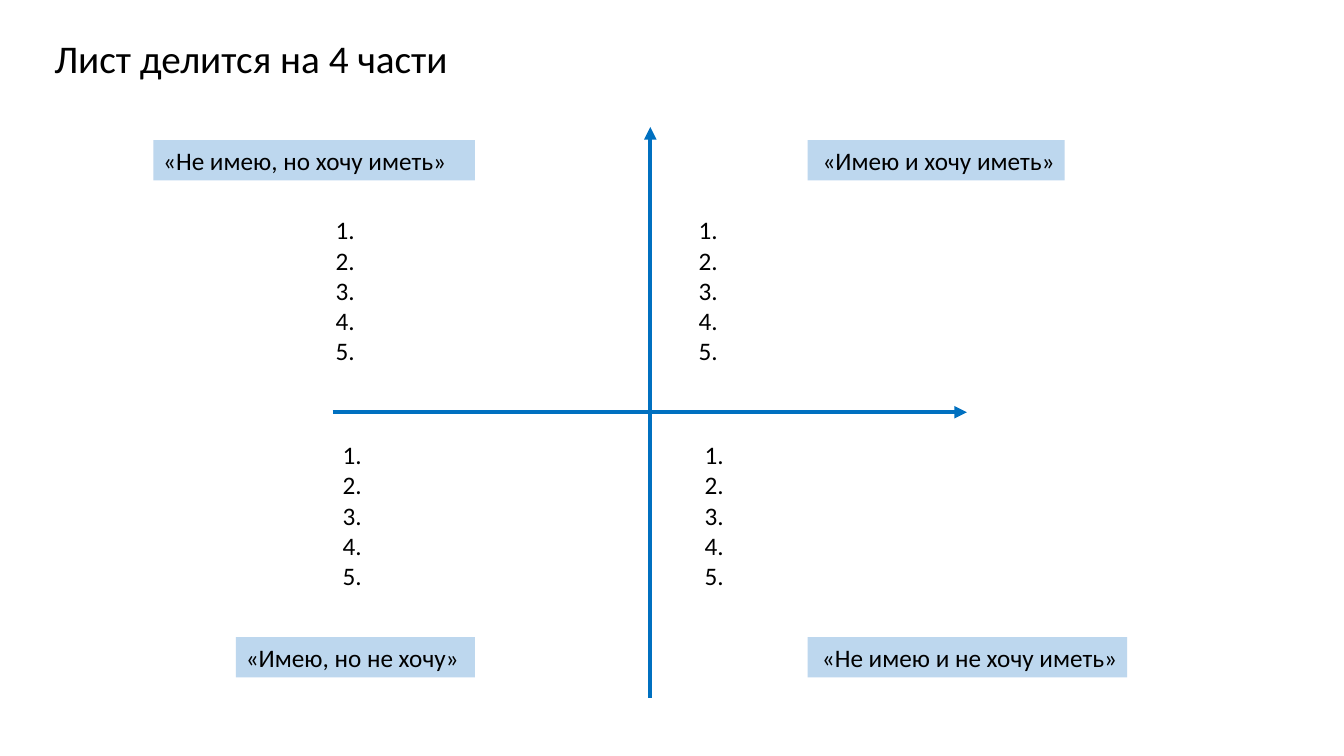
"""Build a slide that splits a sheet into four quadrants of wishes."""
from lxml.etree import SubElement
from pptx import Presentation
from pptx.dml.color import RGBColor
from pptx.enum.shapes import MSO_CONNECTOR
from pptx.enum.text import MSO_AUTO_SIZE, MSO_ANCHOR, PP_ALIGN
from pptx.oxml.ns import qn
from pptx.util import Inches, Pt

TITLE = "Лист делится на 4 части"
TITLE_BOX = (0.44, 0.29, 6.67, 0.57)
AXES = [(6.45, 6.92, 6.45, 1.26), (3.3, 4.09, 9.59, 4.09)]
NUMBERS = [f"{number}." for number in range(1, 6)]
LABEL_HEIGHT = 0.4
LIST_SIZE = (2.37, 1.62)
ROWS = {"top": {"label": 1.39, "list": 2.08}, "bottom": {"label": 6.32, "list": 4.31}}
QUADRANTS = [
    ("«Имею и хочу иметь»", "top", 8.01, 2.55, 6.83, PP_ALIGN.RIGHT),
    ("«Не имею, но хочу иметь»", "top", 1.52, 3.19, 3.23, PP_ALIGN.LEFT),
    ("«Имею, но не хочу»", "bottom", 2.34, 2.37, 3.3, PP_ALIGN.LEFT),
    ("«Не имею и не хочу иметь»", "bottom", 8.01, 3.17, 6.89, PP_ALIGN.RIGHT),
]
FRAME_FORMAT = {
    "word_wrap": True,
    "auto_size": MSO_AUTO_SIZE.SHAPE_TO_FIT_TEXT,
    "vertical_anchor": MSO_ANCHOR.TOP,
}


def color(value):
    return RGBColor.from_string(value)


def add_text(page, box, lines, size=18, align=PP_ALIGN.LEFT, fill=None):
    shape = page.shapes.add_textbox(*map(Inches, box))
    if fill:
        shape.fill.solid()
        shape.fill.fore_color.rgb = color(fill)
    frame = shape.text_frame
    for name, value in FRAME_FORMAT.items():
        setattr(frame, name, value)
    for index, line in enumerate(lines):
        para = frame.add_paragraph() if index else frame.paragraphs[0]
        para.alignment = align
        span = para.add_run()
        span.text = line
        for name, value in {"name": "Calibri", "size": Pt(size)}.items():
            setattr(span.font, name, value)
        span.font.color.rgb = color("000000")


def add_axis(page, ends):
    axis = page.shapes.add_connector(MSO_CONNECTOR.STRAIGHT, *map(Inches, ends))
    axis.line.width = Pt(3)
    axis.line.color.rgb = color("0070C0")
    SubElement(axis.line._get_or_add_ln(), qn("a:tailEnd"), type="triangle")
    SubElement(axis._element.spPr, qn("a:effectLst"))


def main():
    deck = Presentation()
    deck.slide_width, deck.slide_height = Inches(13.33), Inches(7.5)
    page = deck.slides.add_slide(deck.slide_layouts[6])
    for ends in AXES:
        add_axis(page, ends)
    add_text(page, TITLE_BOX, [TITLE], size=28)
    for label, row, left, width, list_left, align in QUADRANTS:
        tops = ROWS[row]
        label_box = (left, tops["label"], width, LABEL_HEIGHT)
        add_text(page, label_box, [label], align=align, fill="BDD7EE")
        add_text(page, (list_left, tops["list"], *LIST_SIZE), NUMBERS)
    deck.save("out.pptx")


if __name__ == "__main__":
    main()
